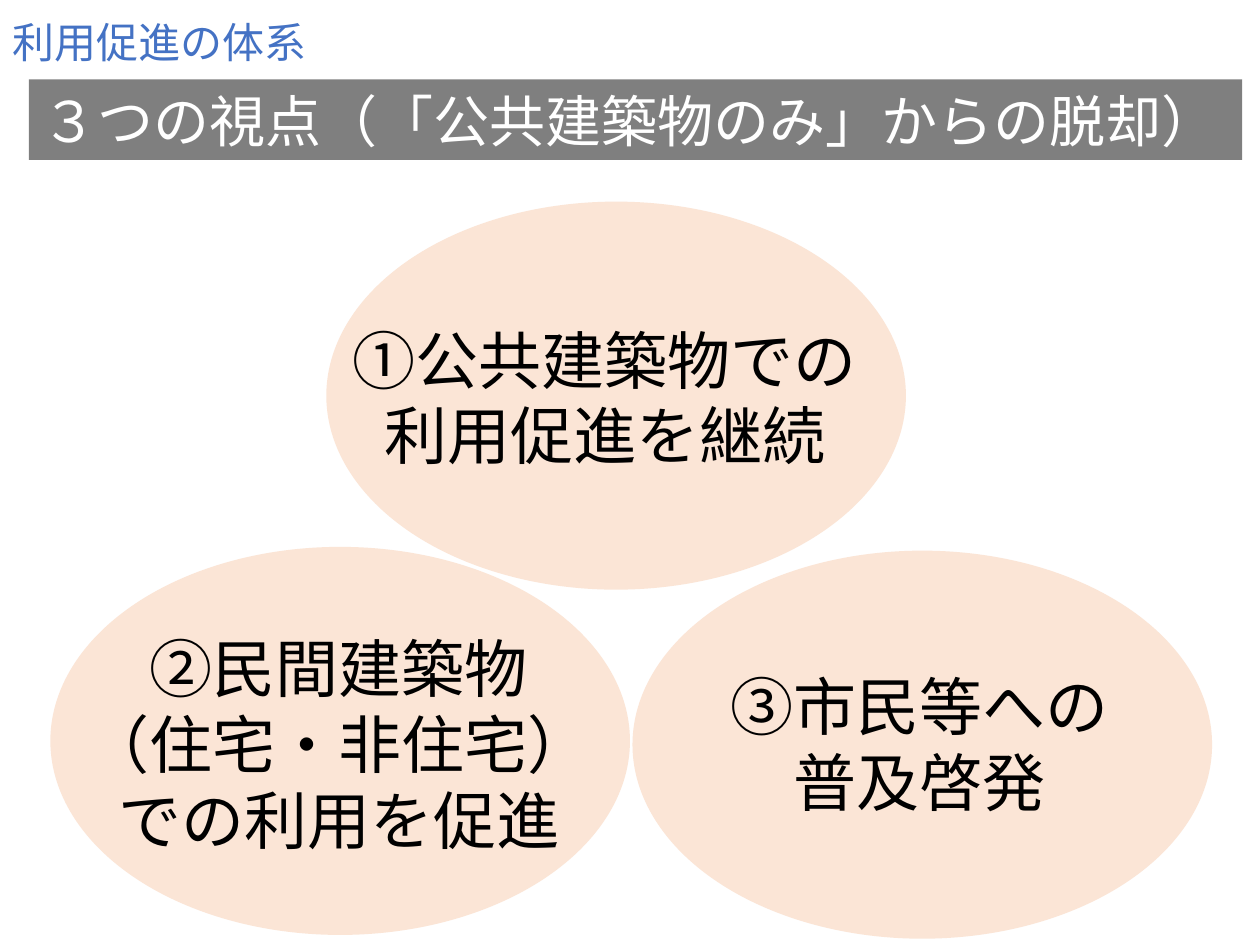
from dataclasses import dataclass

from lxml.etree import SubElement
from pptx import Presentation
from pptx.dml.color import RGBColor
from pptx.enum.shapes import MSO_SHAPE
from pptx.enum.text import MSO_ANCHOR, MSO_AUTO_SIZE, PP_ALIGN
from pptx.oxml.ns import qn
from pptx.util import Inches, Pt


@dataclass(frozen=True)
class Theme:
    """Colours, font and type sizes of the slide."""
    font: str = "Noto Sans CJK JP"
    accent: RGBColor = RGBColor(0x44, 0x72, 0xC4)
    black: RGBColor = RGBColor(0, 0, 0)
    white: RGBColor = RGBColor(255, 255, 255)
    peach: RGBColor = RGBColor(0xFB, 0xE5, 0xD6)
    heading: Pt = Pt(24)
    banner: Pt = Pt(32)
    viewpoint: Pt = Pt(36)


THEME = Theme()


def add_text(slide, box, lines, size, color, align=PP_ALIGN.LEFT, wrap=True):
    """Place a text box with one paragraph per line and return it."""
    label = slide.shapes.add_textbox(*map(Inches, box))
    frame = label.text_frame
    frame.word_wrap = wrap
    frame.auto_size = MSO_AUTO_SIZE.SHAPE_TO_FIT_TEXT
    frame.text = "\n".join(lines)
    for paragraph in frame.paragraphs:
        paragraph.alignment = align
        paragraph.font.size = size
        paragraph.font.color.rgb = color
        paragraph.font.name = THEME.font
        defaults = paragraph._p.pPr.find(qn("a:defRPr"))
        SubElement(defaults, qn("a:ea"), typeface=THEME.font)
    return label


def add_heading(slide, box):
    """Place the small heading above the banner."""
    add_text(slide, box, ["利用促進の体系"], THEME.heading, THEME.accent, wrap=False)


def add_banner(slide, box):
    """Place the half-transparent banner with the main message."""
    banner = add_text(slide, box, ["３つの視点（「公共建築物のみ」からの脱却）"],
                      THEME.banner, THEME.white, wrap=False)
    banner.text_frame.vertical_anchor = MSO_ANCHOR.BOTTOM
    banner.fill.solid()
    banner.fill.fore_color.rgb = THEME.black
    tint = banner._element.spPr.find(qn("a:solidFill"))[0]
    SubElement(tint, qn("a:alpha"), val="50000")


def add_ellipse(slide, box):
    """Place the plain ellipse behind one viewpoint."""
    ellipse = slide.shapes.add_shape(MSO_SHAPE.OVAL, *map(Inches, box))
    ellipse.shadow.inherit = False
    ellipse.fill.solid()
    ellipse.fill.fore_color.rgb = THEME.peach
    ellipse.line.fill.background()


def add_viewpoints(slide, viewpoints):
    """Place every ellipse, then every label on top."""
    for ellipse_box, _, _ in viewpoints:
        add_ellipse(slide, ellipse_box)
    for _, label_box, lines in viewpoints:
        add_text(slide, label_box, lines, THEME.viewpoint, THEME.black, PP_ALIGN.CENTER)


def main():
    """Build and save the slide."""
    deck = Presentation()
    deck.slide_width, deck.slide_height = Inches(10), Inches(7.5)
    slide = deck.slides.add_slide(deck.slide_layouts[6])
    ellipse_size = (4.6, 3.08)
    add_banner(slide, (0.23, 0.63, 9.63, 0.64))
    add_viewpoints(slide, [
        ((2.59, 1.6, *ellipse_size), (2.51, 2.5, 4.58, 1.31),
         ["①公共建築物での", "利用促進を継続"]),
        ((0.4, 4.34, *ellipse_size), (0.4, 4.95, 4.58, 1.92),
         ["②民間建築物", "（住宅・非住宅）", "での利用を促進"]),
        ((5.02, 4.37, *ellipse_size), (4.98, 5.25, 4.64, 1.31),
         ["③市民等への", "普及啓発"]),
    ])
    add_heading(slide, (0, 0.08, 2.56, 0.5))
    deck.save("out.pptx")


if __name__ == "__main__":
    main()
